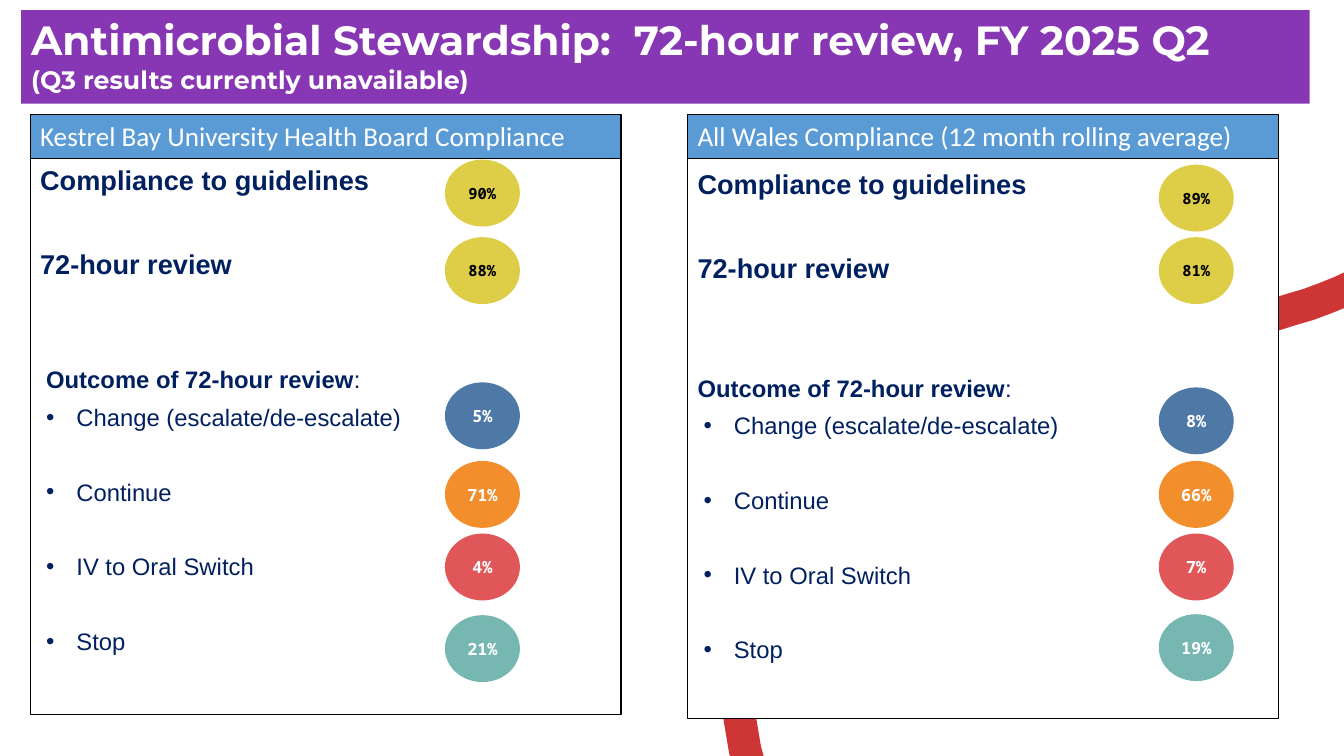
"""Build the antimicrobial stewardship 72-hour review slide."""
import pptx
import pptx.dml.color
import pptx.enum.shapes
import pptx.enum.text
import pptx.util
from lxml import etree

RGB = pptx.dml.color.RGBColor
SHAPE = pptx.enum.shapes.MSO_SHAPE
ANCHOR = pptx.enum.text.MSO_ANCHOR
ALIGN = pptx.enum.text.PP_ALIGN
Pt = pptx.util.Pt
PX = 9144

WHITE = RGB(0xFF, 0xFF, 0xFF)
BLACK = RGB(0x00, 0x00, 0x00)
PURPLE = RGB(0x87, 0x36, 0xB4)
NAVY = RGB(0x00, 0x20, 0x60)
HEADER_BLUE = RGB(0x5B, 0x9B, 0xD5)
RED = RGB(0xCE, 0x36, 0x36)
YELLOW = RGB(0xDD, 0xCD, 0x47)
BLUE = RGB(0x4E, 0x79, 0xA7)
ORANGE = RGB(0xF2, 0x8E, 0x2B)
CORAL = RGB(0xE1, 0x57, 0x59)
TEAL = RGB(0x76, 0xB7, 0xB2)

TITLE = {"name": "Montserrat", "size": Pt(29.1), "bold": True, "color": WHITE}
SUBTITLE = {**TITLE, "size": Pt(18)}
HEADER = {"name": "Calibri", "size": Pt(19.4), "bold": False, "color": WHITE}
MEASURE = {"name": "Arial", "size": Pt(19.4), "bold": True, "color": NAVY}
OUTCOME = {**MEASURE, "size": Pt(17)}
PLAIN = {**OUTCOME, "bold": False}
MEASURE_VALUE = {"name": "Noto Sans Mono", "size": Pt(11), "bold": True, "color": BLACK}
OUTCOME_VALUE = {**MEASURE_VALUE, "size": Pt(12), "color": WHITE}

deck = pptx.Presentation()
deck.slide_width, deck.slide_height = 1333 * PX, 750 * PX
page = deck.slides.add_slide(deck.slide_layouts[6])


def add_box(kind, bounds, fill, line=None, width=0.75, anchor=ANCHOR.TOP):
    box = page.shapes.add_shape(kind, *[length * PX for length in bounds])
    box.shadow.inherit = False
    box.fill.solid()
    box.fill.fore_color.rgb = fill
    if line is None:
        box.line.fill.background()
    else:
        box.line.color.rgb = line
        box.line.width = Pt(width)
    box.text_frame.word_wrap = True
    box.text_frame.vertical_anchor = anchor
    box.text_frame.paragraphs[0].alignment = ALIGN.LEFT
    return box


def add_span(para, text, style):
    span = para.add_run()
    span.text = text
    for key, value in style.items():
        if key == "color":
            span.font.color.rgb = value
        else:
            setattr(span.font, key, value)


CURVES = [
    [(1398, 251), (1234, 373), (893, 327), (765, 506)],
    [(765, 506), (640, 681), (857, 971), (863, 1235)],
]
swoosh_points = []
for curve in CURVES:
    for step in range(41):
        t = step / 40
        weights = ((1 - t) ** 3, 3 * t * (1 - t) ** 2, 3 * t * t * (1 - t), t ** 3)
        x, y = (sum(w * point[axis] for w, point in zip(weights, curve)) for axis in (0, 1))
        if x < 1350 and y < 765:
            swoosh_points.append((round(x), round(y)))
builder = page.shapes.build_freeform(*swoosh_points[0], scale=PX)
builder.add_line_segments(swoosh_points[1:], close=False)
swoosh = builder.convert_to_shape()
swoosh.shadow.inherit = False
swoosh.fill.background()
swoosh.line.color.rgb = RED
swoosh.line.width = Pt(23.25)

banner = add_box(SHAPE.RECTANGLE, (21, 10, 1278, 93), PURPLE)
para = banner.text_frame.paragraphs[0]
add_span(para, "Antimicrobial Stewardship:  72-hour review, FY 2025 Q2", TITLE)
para.add_line_break()
add_span(para, "(Q3 results currently unavailable)", SUBTITLE)

OUTCOMES = ["Change (escalate/de-escalate)", "Continue", "IV to Oral Switch", "Stop"]
CIRCLE_FILLS = [YELLOW, YELLOW, BLUE, ORANGE, CORAL, TEAL]
PANELS = [
    {"header": "Kestrel Bay University Health Board Compliance", "left": 30, "top": 153,
     "circle_left": 442, "circle_tops": [159, 236, 380, 458, 530, 611],
     "values": ["90%", "88%", "5%", "71%", "4%", "21%"],
     "outcome_gap": 54.5, "outcome_indent": 6},
    {"header": "All Wales Compliance (12 month rolling average)", "left": 682, "top": 157,
     "circle_left": 1150, "circle_tops": [164, 236, 385, 458, 530, 610],
     "values": ["89%", "81%", "8%", "66%", "7%", "19%"],
     "outcome_gap": 57.5, "outcome_indent": 0},
]

for panel in PANELS:
    body = add_box(SHAPE.RECTANGLE, (panel["left"], panel["top"], 586, 556), WHITE, BLACK)
    rows = [
        ("Compliance to guidelines", MEASURE, 0, 0, False),
        ("72-hour review", MEASURE, 29.5, 0, False),
        ("Outcome of 72-hour review", OUTCOME, panel["outcome_gap"], panel["outcome_indent"], False),
    ]
    rows += [(text, PLAIN, 26.5 if index else 0, 36, True) for index, text in enumerate(OUTCOMES)]
    for index, (text, style, gap, indent, bulleted) in enumerate(rows):
        para = body.text_frame.paragraphs[0] if index == 0 else body.text_frame.add_paragraph()
        layout = {"alignment": ALIGN.LEFT, "line_spacing": 1.14,
                  "space_before": Pt(gap), "space_after": Pt(3.6)}
        for key, value in layout.items():
            setattr(para, key, value)
        add_span(para, text, style)
        if style is OUTCOME:
            add_span(para, ":", PLAIN)
        properties = para._p.get_or_add_pPr()
        properties.set("marL", str(indent * PX))
        if bulleted:
            properties.set("indent", str(-30 * PX))
            font = etree.SubElement(properties, pptx.oxml.ns.qn("a:buFont"))
            font.set("typeface", "Arial")
            bullet = etree.SubElement(properties, pptx.oxml.ns.qn("a:buChar"))
            bullet.set("char", "•")

    header = add_box(SHAPE.RECTANGLE, (panel["left"], 114, 586, 43), HEADER_BLUE, BLACK)
    add_span(header.text_frame.paragraphs[0], panel["header"], HEADER)

    circles = zip(panel["circle_tops"], panel["values"], CIRCLE_FILLS)
    for top, value, fill in circles:
        circle = add_box(SHAPE.OVAL, (panel["circle_left"], top, 73, 65), fill, fill, 1, ANCHOR.MIDDLE)
        para = circle.text_frame.paragraphs[0]
        para.alignment = ALIGN.CENTER
        add_span(para, value, MEASURE_VALUE if fill is YELLOW else OUTCOME_VALUE)

deck.save("out.pptx")
